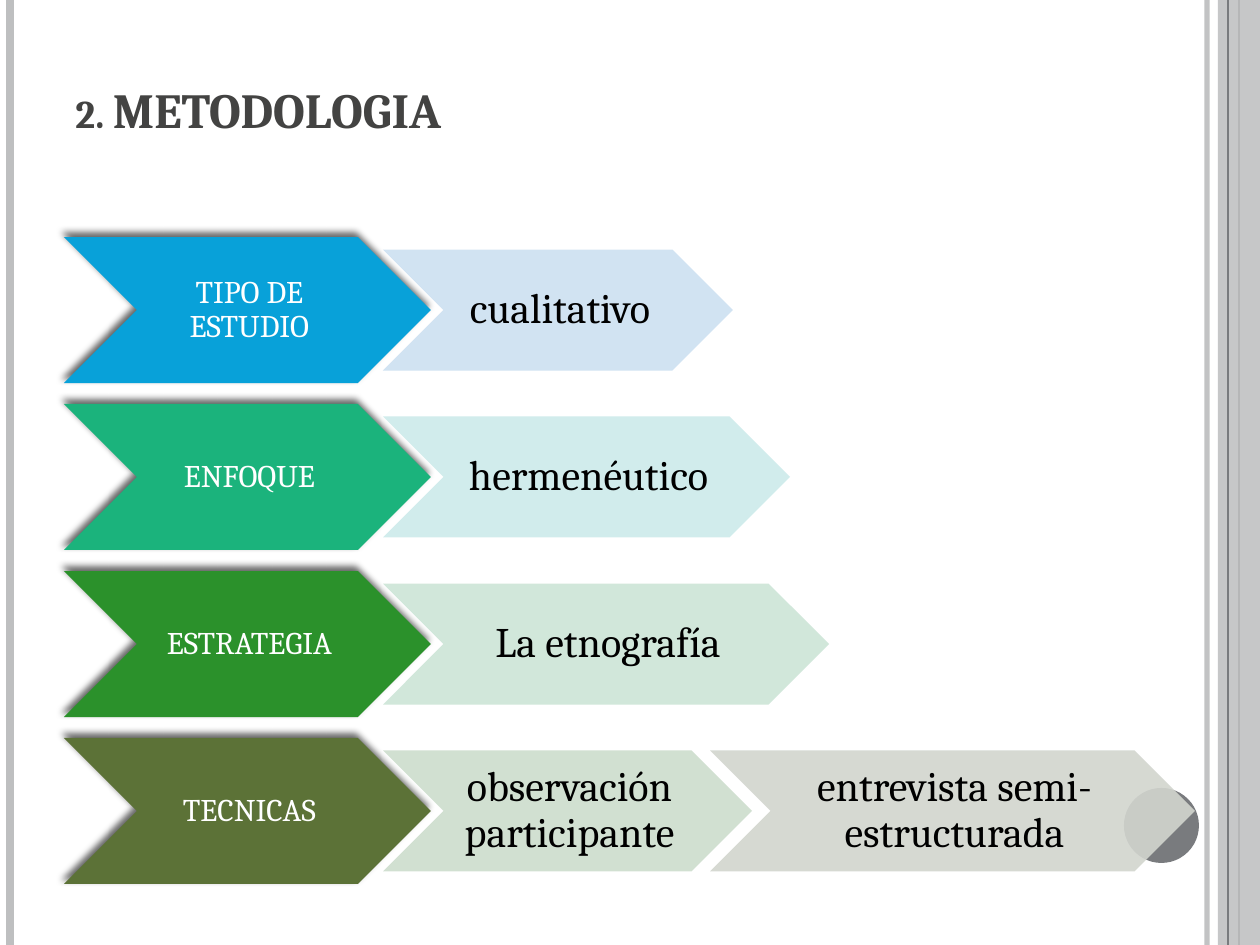
from lxml import etree
from pptx import Presentation
from pptx.dml.color import RGBColor
from pptx.enum.shapes import MSO_CONNECTOR as Link, MSO_SHAPE as Kind
from pptx.enum.text import MSO_ANCHOR as Anchor, PP_ALIGN as Align
from pptx.oxml.ns import qn
from pptx.util import Emu, Pt

SCALE = 914400 / 126
FONT = "Cambria"
ROWS = [
    ("TIPO DE ESTUDIO", "08A1D9", [("cualitativo", 350, "CCE0F1")]),
    ("ENFOQUE", "1BB37C", [("hermenéutico", 407, "CCEBEA")]),
    ("ESTRATEGIA", "2B912B", [("La etnografía", 446, "CCE5D7")]),
    ("TECNICAS", "5C7237", [("observación participante", 369, "CDDDCD"),
                            ("entrevista semi-estructurada", 485, "D2D5CE")]),
]


def px(n):
    return Emu(round(n * SCALE))


def color(target, value):
    target.rgb = RGBColor.from_string(value)


def add(node, tag, **attrs):
    return etree.SubElement(node, qn(tag), attrs)


def fade(item, alpha):
    for node in item.element.spPr.iter(qn("a:srgbClr")):
        add(node, "a:alpha", val=str(alpha * 1000))


def shape(slide, kind, box, fill, alpha=100):
    item = slide.shapes.add_shape(kind, *map(px, box))
    item.shadow.inherit = False
    item.line.fill.background()
    item.fill.solid()
    color(item.fill.fore_color, fill)
    if alpha < 100:
        fade(item, alpha)
    return item


def rule(slide, x, high, hue, width, alpha=100):
    item = slide.shapes.add_connector(Link.STRAIGHT, px(x), 0, px(x), px(high))
    color(item.line.color, hue)
    item.line.width = Pt(width)
    add(item.element.spPr, "a:effectLst")
    if alpha < 100:
        fade(item, alpha)


def write(para, text, size, hue):
    run = para.add_run()
    run.text = text
    run.font.name = FONT
    run.font.size = Pt(size)
    color(run.font.color, hue)
    return run


def frame(slide, box):
    left, top, wide, high = box
    right = left + wide
    rule(slide, right - 53, high, "BEBFC0", 3, 93)
    rule(slide, left + 10, high, "BEBFC0", 4.5)
    rule(slide, right - 21, high, "797B7E", 1.5)
    shape(slide, Kind.RECTANGLE, (right - 42, top, 42, high), "BEBFC0", 87)
    rule(slide, right - 32, high, "797B7E", 0.75)
    shape(slide, Kind.OVAL, (right - 136, top + high - 157, 75, 75), "797B7E")


def title(slide, box):
    text = slide.shapes.add_textbox(*map(px, box)).text_frame
    text.word_wrap = True
    text.vertical_anchor = Anchor.BOTTOM
    run = write(text.paragraphs[0], "2. METODOLOGIA", 28, "434342")
    run.font.bold = True
    run.font._element.set("cap", "small")


def arrow(slide, box, label, size, hue, fill, alpha=100):
    item = shape(slide, Kind.CHEVRON, box, fill, alpha)
    text = item.text_frame
    text.word_wrap = True
    text.vertical_anchor = Anchor.MIDDLE
    text.margin_left, text.margin_right = px(4), 0
    text.margin_top = text.margin_bottom = px(2)
    para = text.paragraphs[0]
    para.alignment = Align.CENTER
    para.line_spacing = 0.9
    write(para, label, size, hue)
    return item


def shade(item):
    cast = add(item.element.spPr.find(qn("a:effectLst")), "a:outerShdw",
               blurRad=str(Pt(4)), dist=str(Pt(3)), dir=str(245 * 60000),
               algn="tl", rotWithShape="0")
    add(add(cast, "a:srgbClr", val="000000"), "a:alpha", val="60000")


def chain(slide, box, head, fill, steps):
    left, top, wide, high = box
    shade(arrow(slide, box, head, 18, "FFFFFF", fill))
    small = 121
    x = left + wide - 48
    for label, width, tint in steps:
        spot = (x, top + (high - small) / 2, width, small)
        arrow(slide, spot, label, 24, "000000", tint, 90)
        x += width - 42


def main():
    deck = Presentation()
    deck.slide_width, deck.slide_height = px(1260), px(945)
    slide = deck.slides.add_slide(deck.slide_layouts[6])
    frame(slide, (0, 0, 1260, 945))
    title(slide, (63, 38, 1029, 107))
    for i, (head, fill, steps) in enumerate(ROWS):
        chain(slide, (64, 237 + 167 * i, 367, 146), head, fill, steps)
    deck.save("out.pptx")


if __name__ == "__main__":
    main()
